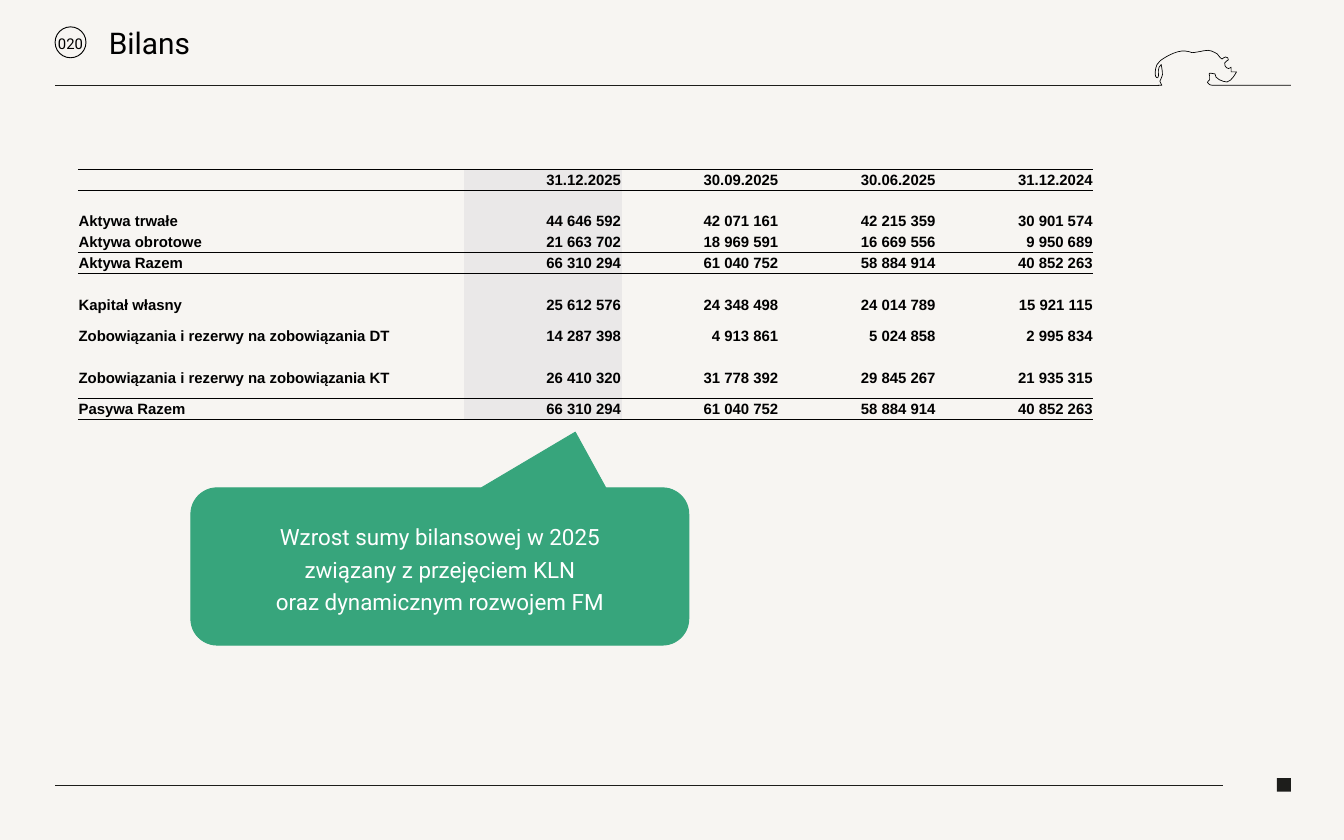
from dataclasses import dataclass

from lxml import etree
from pptx import Presentation
from pptx import util as u
from pptx.dml.color import RGBColor
from pptx.enum import shapes, text
from pptx.oxml import ns

COLORS = {
    "sand": "E7DED5",
    "ink": "1D1D1B",
    "black": "000000",
    "white": "FFFFFF",
    "highlight": "EAE8E8",
    "green": "37A57C",
}
NO_STYLE = "{2D5ABB26-0587-4C30-8999-92F81FD0307C}"
RHINO_START = (17.23, 1.27)
RHINO_PATH = [
    (17.29, 1.27), (17.26, 1.21),
    (17.26, 1.21, 17.27, 1.19, 17.29, 1.14), (17.31, 1.12, 17.29, 1.02, 17.28, 0.96),
    (17.22, 1, 17.24, 1.11, 17.24, 1.11), (17.25, 1.16, 17.19, 1.2, 17.19, 1.08),
    (17.2, 0.96, 17.23, 0.94, 17.26, 0.91), (17.29, 0.88, 17.5, 0.74, 17.64, 0.76),
    (17.78, 0.78, 17.69, 0.79, 17.78, 0.78), (17.87, 0.77, 17.97, 0.73, 18.03, 0.76),
    (18.1, 0.79, 18.14, 0.81, 18.16, 0.86), (18.18, 0.89, 18.19, 0.88, 18.21, 0.86),
    (18.22, 0.85, 18.25, 0.84, 18.27, 0.86), (18.29, 0.88, 18.28, 0.91, 18.25, 0.91),
    (18.22, 0.91, 18.22, 0.96, 18.23, 0.98), (18.24, 1, 18.26, 1.02, 18.28, 1.02),
    (18.3, 1.02, 18.32, 1, 18.32, 1), (18.32, 1.07), (18.4, 1.07),
    (18.4, 1.07, 18.33, 1.21, 18.26, 1.22), (18.2, 1.22, 18.07, 1.17, 18.08, 1.1),
    (18.04, 1.09, 18, 1.09, 18, 1.09), (18, 1.09, 17.98, 1.1, 18, 1.13),
    (18.02, 1.17, 17.99, 1.21, 17.97, 1.22), (17.96, 1.22, 17.99, 1.27, 18.04, 1.27),
    (19.21, 1.27),
]


@dataclass
class BalanceRow:
    label: str = ""
    values: tuple[str, ...] = ("", "", "", "")
    height: float = 0.31
    ruled: bool = False


BALANCE = [
    BalanceRow("", ("31.12.2025", "30.09.2025", "30.06.2025", "31.12.2024"), ruled=True),
    BalanceRow(),
    BalanceRow("Aktywa trwałe", ("44 646 592", "42 071 161", "42 215 359", "30 901 574")),
    BalanceRow("Aktywa obrotowe", ("21 663 702", "18 969 591", "16 669 556", "9 950 689")),
    BalanceRow("Aktywa Razem", ("66 310 294", "61 040 752", "58 884 914", "40 852 263"), ruled=True),
    BalanceRow(),
    BalanceRow("Kapitał własny", ("25 612 576", "24 348 498", "24 014 789", "15 921 115")),
    BalanceRow("Zobowiązania i rezerwy na zobowiązania DT",
               ("14 287 398", "4 913 861", "5 024 858", "2 995 834"), 0.62),
    BalanceRow("Zobowiązania i rezerwy na zobowiązania KT",
               ("26 410 320", "31 778 392", "29 845 267", "21 935 315"), 0.62),
    BalanceRow("Pasywa Razem", ("66 310 294", "61 040 752", "58 884 914", "40 852 263"), ruled=True),
]


def color(name: str) -> RGBColor:
    return RGBColor.from_string(COLORS[name])


def box(*lengths: float) -> list[u.Length]:
    return [u.Inches(length) for length in lengths]


def add_run(paragraph, words: str, size: float, name: str = "Roboto",
            tone: str = "black", bold: bool = False) -> None:
    run = paragraph.add_run()
    run.text = words
    run.font.size, run.font.name, run.font.bold = u.Pt(size), name, bold
    run.font.color.rgb = color(tone)


def prepare_frame(frame) -> None:
    frame.margin_left = frame.margin_right = frame.margin_top = frame.margin_bottom = 0
    frame.vertical_anchor = text.MSO_ANCHOR.MIDDLE
    frame.auto_size = text.MSO_AUTO_SIZE.NONE
    frame.word_wrap = True


def add_shape(slide, kind, place: tuple, fill: str = "", line: str = ""):
    shape = slide.shapes.add_shape(kind, *box(*place))
    shape.shadow.inherit = False
    if fill:
        shape.fill.solid()
        shape.fill.fore_color.rgb = color(fill)
    else:
        shape.fill.background()
    if line:
        shape.line.color.rgb = color(line)
        shape.line.width = u.Pt(1)
    else:
        shape.line.fill.background()
    return shape


def add_backdrop(slide) -> None:
    backdrop = add_shape(slide, shapes.MSO_SHAPE.RECTANGLE, (0, 0, 20, 12.5), "sand")
    tint = backdrop._element.spPr.find(".//" + ns.qn("a:srgbClr"))
    etree.SubElement(tint, ns.qn("a:alpha"), val="30000")
    slide.shapes.title._element.addprevious(backdrop._element)


def add_rule(slide, left: float, right: float, top: float) -> None:
    rule = slide.shapes.add_connector(shapes.MSO_CONNECTOR.STRAIGHT, *box(left, top, right, top))
    rule.line.color.rgb = color("ink")
    rule.line.width = u.Pt(0.75)
    etree.SubElement(rule._element.spPr, ns.qn("a:effectLst"))


def add_rhino(slide) -> None:
    builder = slide.shapes.build_freeform(*box(*RHINO_START))
    builder.add_line_segments([box(*segment[-2:]) for segment in RHINO_PATH], close=False)
    rhino = builder.convert_to_shape()
    rhino.shadow.inherit = False
    rhino.fill.background()
    rhino.line.color.rgb = color("black")
    rhino.line.width = u.Pt(0.75)
    steps = list(rhino._element.spPr.iter(ns.qn("a:lnTo")))
    for step, segment in zip(steps, RHINO_PATH):
        if len(segment) == 6:
            curve = etree.Element(ns.qn("a:cubicBezTo"))
            for x, y in zip(box(*segment[::2]), box(*segment[1::2])):
                etree.SubElement(curve, ns.qn("a:pt"), x=str(x - rhino.left), y=str(y - rhino.top))
            step.getparent().replace(step, curve)


def add_border(cell, side: str, visible: bool) -> None:
    border = etree.SubElement(cell._tc.get_or_add_tcPr(), ns.qn(f"a:{side}"), w=str(u.Pt(0.5)))
    if visible:
        fill = etree.SubElement(border, ns.qn("a:solidFill"))
        etree.SubElement(fill, ns.qn("a:srgbClr"), val=COLORS["black"])
    else:
        etree.SubElement(border, ns.qn("a:noFill"))


def fill_cell(cell, words: str, column: int, above: bool, below: bool) -> None:
    cell.margin_left = cell.margin_right = cell.margin_top = u.Inches(0.01)
    cell.margin_bottom = 0
    cell.vertical_anchor = text.MSO_ANCHOR.MIDDLE
    add_border(cell, "lnT", above)
    add_border(cell, "lnB", below)
    if column == 1:
        cell.fill.solid()
        cell.fill.fore_color.rgb = color("highlight")
    else:
        cell.fill.background()
    paragraph = cell.text_frame.paragraphs[0]
    paragraph.alignment = text.PP_ALIGN.RIGHT if column else text.PP_ALIGN.LEFT
    if words:
        add_run(paragraph, words, 16, "Arial", bold=True)
    else:
        etree.SubElement(paragraph._p, ns.qn("a:endParaRPr"), sz="1600")


def add_balance(slide) -> None:
    height = sum(row.height for row in BALANCE)
    table = slide.shapes.add_table(len(BALANCE), 5, *box(1.16, 2.52, 15.11, height)).table
    table.first_row = table.horz_banding = False
    table._tbl.tblPr.find(ns.qn("a:tableStyleId")).text = NO_STYLE
    for index, column in enumerate(table.columns):
        column.width = u.Inches(2.34 if index else 5.75)
    ruled = [False] + [row.ruled for row in BALANCE] + [False]
    for index, row in enumerate(BALANCE):
        table.rows[index].height = u.Inches(row.height)
        above = ruled[index] or ruled[index + 1]
        below = ruled[index + 1] or ruled[index + 2]
        for column, words in enumerate((row.label, *row.values)):
            fill_cell(table.cell(index, column), words, column, above, below)


def add_callout(slide) -> None:
    callout = add_shape(slide, shapes.MSO_SHAPE.ROUNDED_RECTANGULAR_CALLOUT,
                        (2.84, 7.26, 7.41, 2.34), "green", "green")
    for index, value in enumerate((0.272, -0.854, 0.167)):
        callout.adjustments[index] = value
    callout.text_frame.vertical_anchor = text.MSO_ANCHOR.MIDDLE
    paragraph = callout.text_frame.paragraphs[0]
    paragraph.alignment = text.PP_ALIGN.CENTER
    paragraph.line_spacing = 1.2
    lines = ("Wzrost sumy bilansowej w 2025", "związany z przejęciem KLN", "oraz dynamicznym rozwojem FM")
    for index, line in enumerate(lines):
        if index:
            paragraph.add_line_break()
        add_run(paragraph, line, 24, tone="white")


def main() -> None:
    presentation = Presentation()
    presentation.slide_width, presentation.slide_height = box(20, 12.5)
    slide = presentation.slides.add_slide(presentation.slide_layouts[5])
    add_backdrop(slide)
    add_shape(slide, shapes.MSO_SHAPE.RECTANGLE, (19, 11.58, 0.21, 0.2), "ink")
    add_rule(slide, 0.82, 17.24, 1.27)
    add_rule(slide, 0.82, 18.2, 11.68)
    add_rhino(slide)
    add_shape(slide, shapes.MSO_SHAPE.OVAL, (0.82, 0.4, 0.46, 0.46), line="black")
    number = slide.shapes.add_textbox(*box(0.82, 0.43, 0.46, 0.45)).text_frame
    prepare_frame(number)
    number.paragraphs[0].alignment = text.PP_ALIGN.CENTER
    add_run(number.paragraphs[0], "020", 15.9)
    title = slide.shapes.title
    title.left, title.top, title.width, title.height = box(1.62, 0.06, 15.05, 1.21)
    prepare_frame(title.text_frame)
    heading = title.text_frame.paragraphs[0]
    heading.alignment = text.PP_ALIGN.LEFT
    heading.line_spacing = 0.9
    add_run(heading, "Bilans", 32)
    add_balance(slide)
    add_callout(slide)
    presentation.save("out.pptx")


if __name__ == "__main__":
    main()
